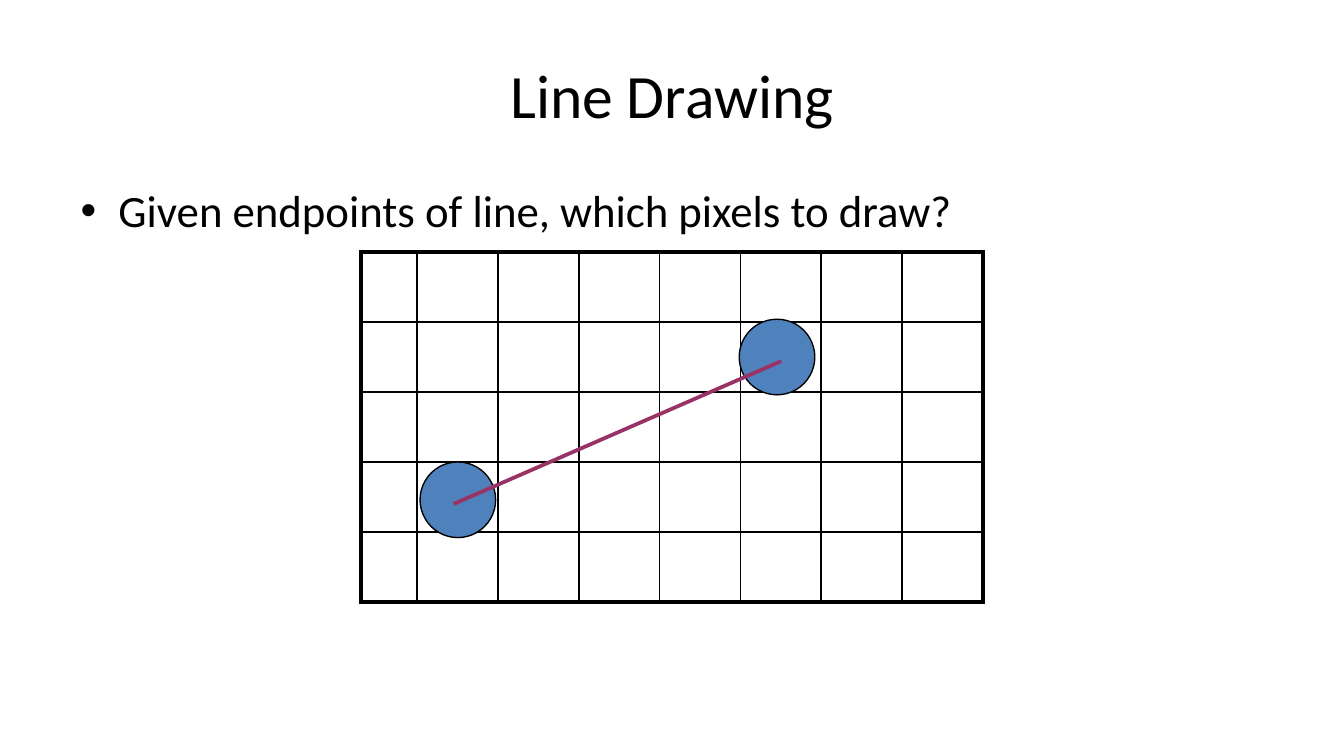
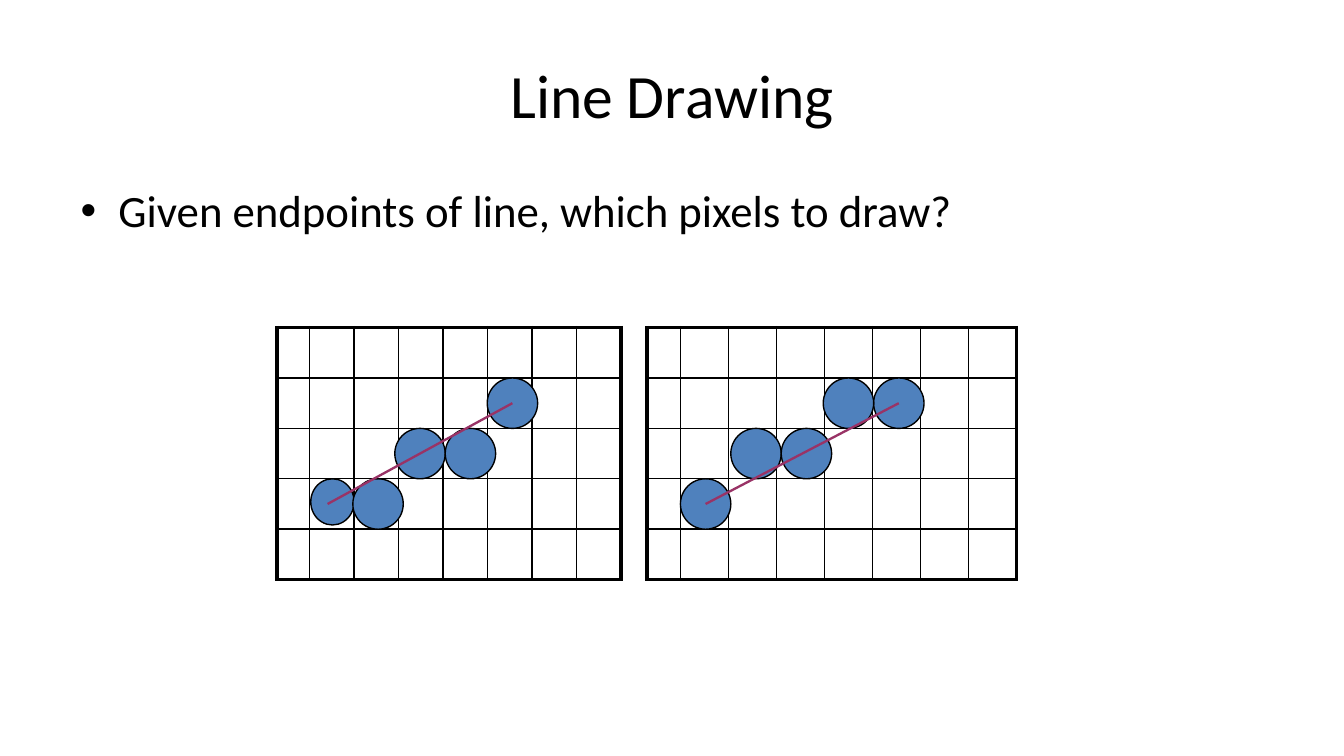
"""Build two slides on choosing which pixels draw a line."""
from lxml import etree
from pptx import Presentation
from pptx.dml.color import RGBColor
from pptx.enum.shapes import MSO_CONNECTOR, MSO_SHAPE
from pptx.enum.text import MSO_ANCHOR, MSO_AUTO_SIZE, PP_ALIGN
from pptx.oxml.ns import qn
from pptx.util import Pt

PX = 9525
ELLIPSE = MSO_SHAPE.OVAL
STRAIGHT = MSO_CONNECTOR.STRAIGHT
NO_FIT = MSO_AUTO_SIZE.NONE
MIDDLE, TOP = MSO_ANCHOR.MIDDLE, MSO_ANCHOR.TOP
CENTER, LEFT = PP_ALIGN.CENTER, PP_ALIGN.LEFT
COLORS = {"ink": "000000", "pixel": "4F81BD", "segment": "993366", "paper": "FFFFFF"}
ROWS, COLUMNS = 5, 8
OUTER, INNER = 2.25, 1
DOT = 36
INDENT = 27

TEXTS = [
    {"text": "Line Drawing", "at": (48, 22, 864, 90), "size": 33,
     "anchor": MIDDLE, "align": CENTER},
    {"text": "Given endpoints of line, which pixels to draw?",
     "at": (48, 126, 864, 356), "size": 24, "anchor": TOP, "align": LEFT},
]
SLIDES = [
    {
        "grids": [(258, 180, 444, 250, 40)],
        "pixels": [(300, 330, 54, 54), (528, 228, 54, 54)],
        "segments": [(324, 360, 558, 258)],
        "weight": 2,
    },
    {
        "grids": [(198, 234, 246, 180, 23), (462, 234, 264, 180, 24)],
        "pixels": [(222, 342, 31, 33)] + [
            (left, top, DOT, DOT) for left, top in [
                (348, 270), (624, 270), (486, 342), (252, 342), (588, 270),
                (282, 306), (318, 306), (522, 306), (558, 306)]],
        "segments": [(234, 360, 366, 288), (504, 360, 642, 288)],
        "weight": 1.25,
    },
]


def scale(lengths):
    """Turn px lengths into EMU."""
    return [round(length * PX) for length in lengths]


def add_grid(slide, left, top, width, height, first_width):
    """Add an empty pixel grid with a heavy frame and a narrow first column."""
    frame = slide.shapes.add_table(ROWS, COLUMNS, *scale((left, top, width, height)))
    table = frame.table
    table.first_row = table.horz_banding = False
    other_width = (width - first_width) / (COLUMNS - 1)
    for index, column in enumerate(table.columns):
        column.width = round((other_width if index else first_width) * PX)
    for row_index, row in enumerate(table.rows):
        row.height = round(height / ROWS * PX)
        for column_index, cell in enumerate(row.cells):
            for side in ("left", "right", "top", "bottom"):
                setattr(cell, f"margin_{side}", 0)
            cell.fill.background()
            on_frame = {
                "a:lnL": column_index == 0,
                "a:lnR": column_index == COLUMNS - 1,
                "a:lnT": row_index == 0,
                "a:lnB": row_index == ROWS - 1,
            }
            properties = cell._tc.get_or_add_tcPr()
            for position, (tag, heavy) in enumerate(on_frame.items()):
                border = etree.Element(qn(tag), w=str(Pt(OUTER if heavy else INNER)))
                fill = etree.SubElement(border, qn("a:solidFill"))
                etree.SubElement(fill, qn("a:srgbClr"), val=COLORS["ink"])
                properties.insert(position, border)


deck = Presentation()
deck.slide_width, deck.slide_height = scale((960, 540))

for content in SLIDES:
    slide = deck.slides.add_slide(deck.slide_layouts[1])
    slide.background.fill.solid()
    slide.background.fill.fore_color.rgb = RGBColor.from_string(COLORS["paper"])

    for box, style in zip(slide.placeholders, TEXTS):
        box.left, box.top, box.width, box.height = scale(style["at"])
        frame = box.text_frame
        frame.auto_size = NO_FIT
        frame.vertical_anchor = style["anchor"]
        para = frame.paragraphs[0]
        para.alignment = style["align"]
        span = para.add_run()
        span.text = style["text"]
        for name, value in {"name": "Calibri", "size": Pt(style["size"])}.items():
            setattr(span.font, name, value)
        span.font.color.rgb = RGBColor.from_string(COLORS["ink"])
    bullet = para._p.get_or_add_pPr()
    bullet.set("marL", str(INDENT * PX))
    bullet.set("indent", str(-INDENT * PX))

    for grid in content["grids"]:
        add_grid(slide, *grid)

    for place in content["pixels"]:
        pixel = slide.shapes.add_shape(ELLIPSE, *scale(place))
        pixel.shadow.inherit = False
        pixel.fill.solid()
        pixel.fill.fore_color.rgb = RGBColor.from_string(COLORS["pixel"])
        pixel.line.color.rgb = RGBColor.from_string(COLORS["ink"])
        pixel.line.width = Pt(0.75)

    for ends in content["segments"]:
        segment = slide.shapes.add_connector(STRAIGHT, *scale(ends))
        segment.line.color.rgb = RGBColor.from_string(COLORS["segment"])
        segment.line.width = Pt(content["weight"])
        etree.SubElement(segment._element.spPr, qn("a:effectLst"))

deck.save("out.pptx")
